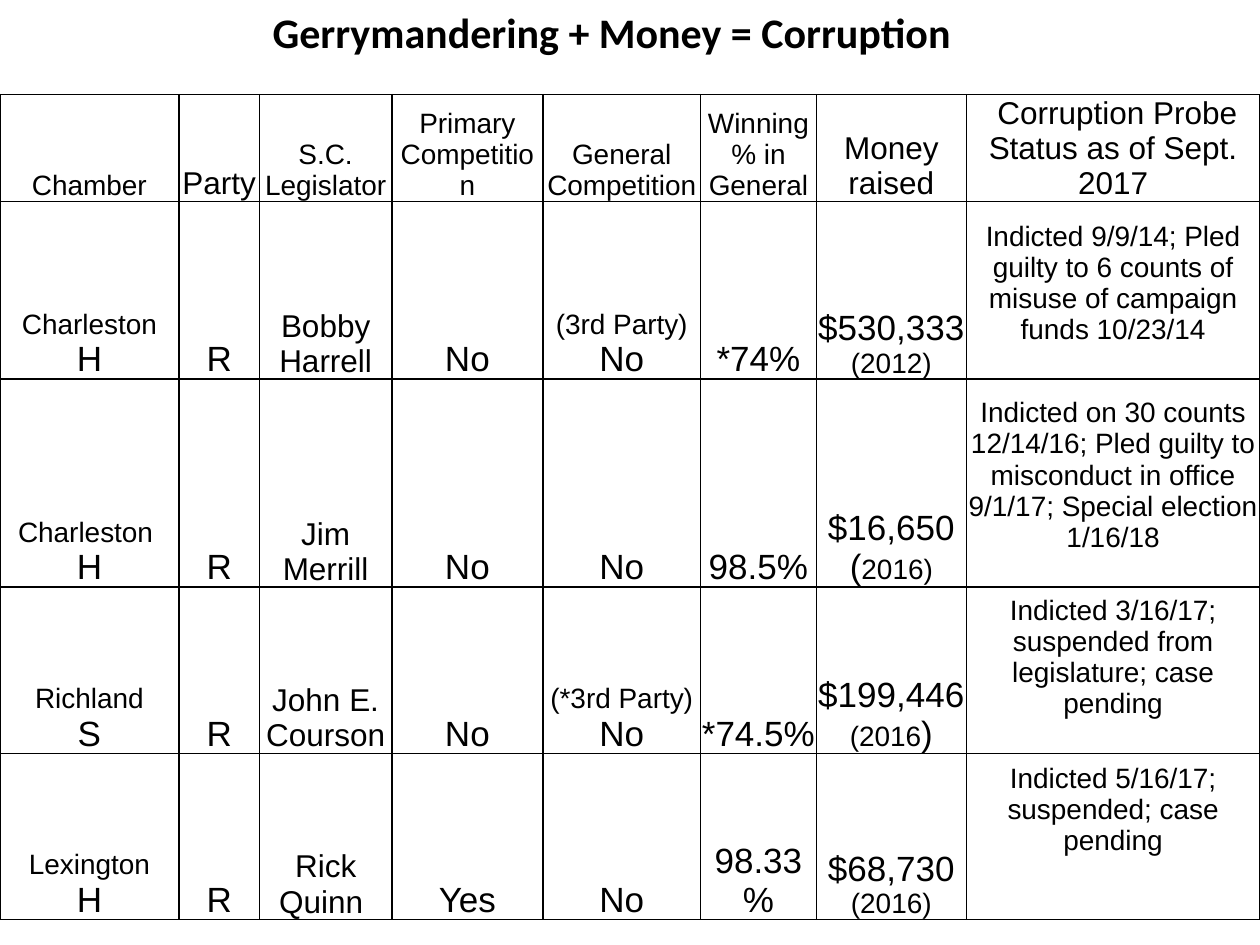
from lxml import etree
from pptx import Presentation
from pptx import util as u
from pptx.dml.color import RGBColor
from pptx.enum import text
from pptx.oxml.ns import qn

BLACK = RGBColor(0x00, 0x00, 0x00)
SMALL, MEDIUM, LARGE = 16, 18, 20

COLUMNS = [1.42, 0.64, 1.05, 1.2, 1.25, 0.92, 1.19, 2.33]
ROWS = [0.75, 1.41, 1.65, 1.32, 1.32]
HEADERS = [
    ("Chamber", SMALL), ("Party", MEDIUM), ("S.C. Legislator", SMALL),
    ("Primary Competition", SMALL), ("General Competition", SMALL),
    ("Winning % in General", SMALL), ("Money raised", MEDIUM),
    (" Corruption Probe Status as of Sept. 2017", MEDIUM),
]
LEGISLATORS = [
    ("Charleston", "H", "Bobby Harrell", "No", "(3rd Party)", "*74%",
     [[("$530,333 ", LARGE), ("(2012)", SMALL)]],
     "Indicted 9/9/14; Pled guilty to 6 counts of misuse of campaign funds 10/23/14", 0.27),
    ("Charleston ", "H", "Jim Merrill", "No", None, "98.5%",
     [[("$16,650 (", LARGE), ("2016)", SMALL)]],
     "Indicted on 30 counts 12/14/16; Pled guilty to misconduct in office 9/1/17; "
     "Special election 1/16/18", 0.27),
    ("Richland", "S", "John E. Courson", "No", "(*3rd Party)", "*74.5%",
     [[("$199,446", LARGE)], [("(2016", SMALL), (")", LARGE)]],
     "Indicted 3/16/17; suspended from legislature; case pending", 0.27),
    ("Lexington", "H", "Rick Quinn ", "Yes", None, "98.33%",
     [[("$68,730", LARGE)], [("(2016)", SMALL)]],
     "Indicted 5/16/17; suspended; case pending", 0.5),
]


class Deck:
    def __init__(self, prs):
        self.s = prs.slides.add_slide(prs.slide_layouts[6])

    def add_text(self, tf, paragraphs, font="Arial", bold=False):
        for i, runs in enumerate(paragraphs):
            p = tf.paragraphs[0] if i == 0 else tf.add_paragraph()
            p.alignment = text.PP_ALIGN.CENTER
            for words, size in runs:
                r = p.add_run()
                r.text = words
                r.font.name = font
                r.font.size = u.Pt(size)
                r.font.bold = bold
                r.font.color.rgb = BLACK

    def title(self, words, left, top, width, height):
        sp = self.s.shapes.add_textbox(*map(u.Inches, (left, top, width, height)))
        tf = sp.text_frame
        tf.word_wrap = True
        tf.auto_size = text.MSO_AUTO_SIZE.SHAPE_TO_FIT_TEXT
        self.add_text(tf, [[(words, 24)]], "Calibri", True)

    def table(self, left, top, columns, rows):
        sp = self.s.shapes.add_table(
            len(rows), len(columns), u.Inches(left), u.Inches(top),
            u.Inches(sum(columns)), u.Inches(sum(rows)))
        table = sp.table
        table.first_row = table.horz_banding = False
        for column, width in zip(table.columns, columns):
            column.width = u.Inches(width)
        for row, height in zip(table.rows, rows):
            row.height = u.Inches(height)
        return table

    def cell(self, cell, paragraphs, bottom=0):
        cell.margin_left = cell.margin_right = cell.margin_top = u.Inches(0.01)
        cell.margin_bottom = u.Inches(bottom)
        cell.vertical_anchor = text.MSO_ANCHOR.BOTTOM
        self.border(cell)
        cell.fill.background()
        self.add_text(cell.text_frame, paragraphs)

    def border(self, cell):
        props = cell._tc.get_or_add_tcPr()
        for side in ("a:lnL", "a:lnR", "a:lnT", "a:lnB"):
            ln = etree.SubElement(props, qn(side), w=str(u.Pt(1)))
            fill = etree.SubElement(ln, qn("a:solidFill"))
            etree.SubElement(fill, qn("a:srgbClr"), val=str(BLACK))


def legislator_cells(county, chamber, name, primary, note, share, money, status):
    general = [[(note, SMALL)]] if note else []
    return [
        [[(county, SMALL)], [(chamber, LARGE)]],
        [[("R", LARGE)]],
        [[(name, MEDIUM)]],
        [[(primary, LARGE)]],
        general + [[("No", LARGE)]],
        [[(share, LARGE)]],
        money,
        [[(status, SMALL)]],
    ]


def main():
    prs = Presentation()
    prs.slide_width, prs.slide_height = u.Inches(10), u.Inches(7.5)
    deck = Deck(prs)
    table = deck.table(0, 0.75, COLUMNS, ROWS)
    for col, header in enumerate(HEADERS):
        deck.cell(table.cell(0, col), [[header]])
    for row, (*fields, gap) in enumerate(LEGISLATORS, 1):
        for col, paragraphs in enumerate(legislator_cells(*fields)):
            last = col == len(COLUMNS) - 1
            deck.cell(table.cell(row, col), paragraphs, gap if last else 0)
    deck.title("Gerrymandering + Money = Corruption", 0.02, 0, 9.67, 0.5)
    prs.save("out.pptx")


if __name__ == "__main__":
    main()
